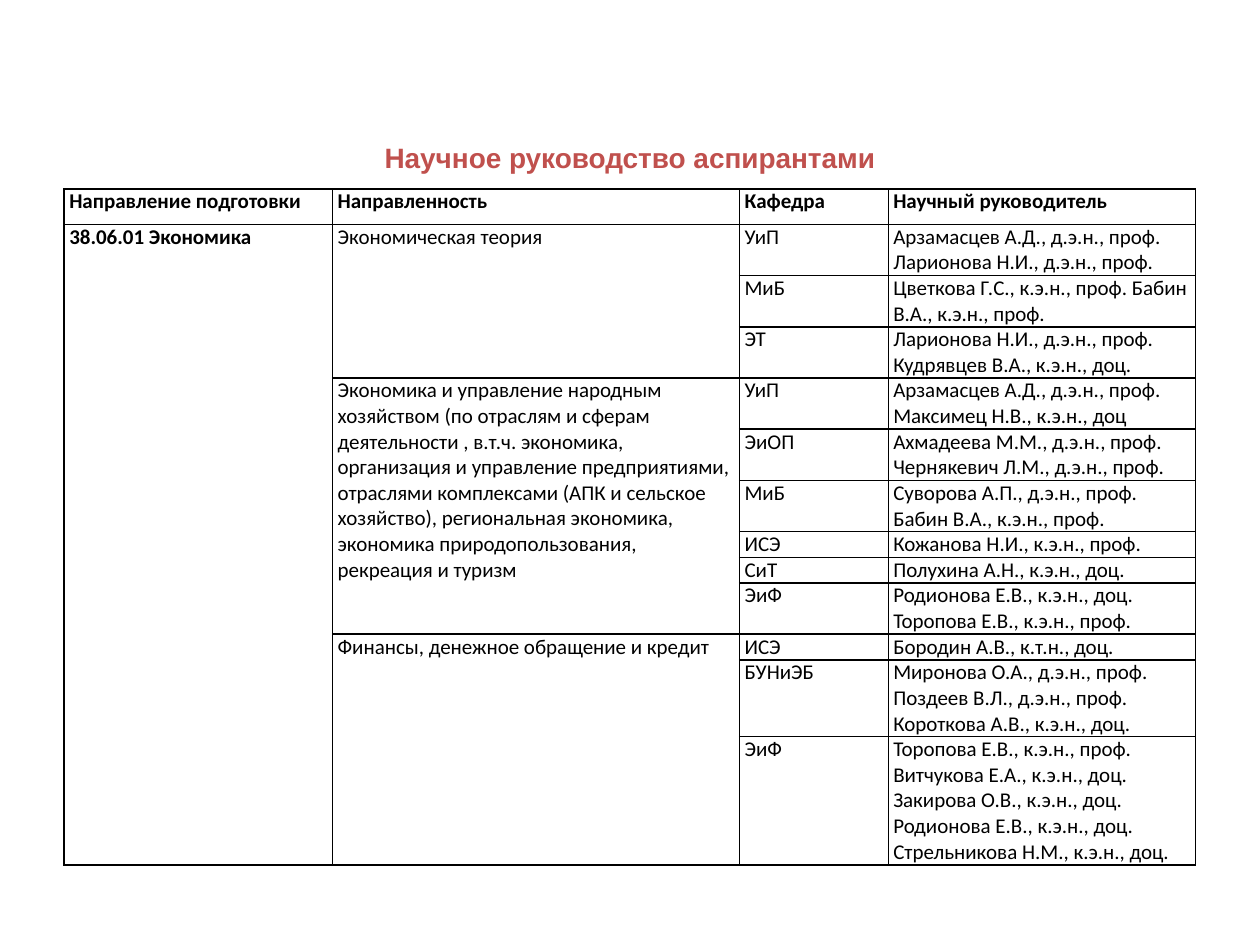
from math import ceil

from lxml.etree import SubElement
from pptx import Presentation
from pptx.dml.color import RGBColor
from pptx.enum.text import MSO_ANCHOR, MSO_AUTO_SIZE, PP_ALIGN
from pptx.oxml.ns import qn
from pptx.util import Inches, Pt

TITLE = "Научное руководство аспирантами"
HEADERS = ["Направление подготовки", "Направленность", "Кафедра", "Научный руководитель"]
PROGRAMME = "38.06.01 Экономика"
# Each specialization lists its departments with their supervisors, one paragraph a line.
SPECIALIZATIONS = [
    ("Экономическая теория", [
        ("УиП", "Арзамасцев А.Д., д.э.н., проф. Ларионова Н.И., д.э.н., проф."),
        ("МиБ", "Цветкова Г.С., к.э.н., проф. Бабин В.А., к.э.н., проф."),
        ("ЭТ", "Ларионова Н.И., д.э.н., проф.\nКудрявцев В.А., к.э.н., доц."),
    ]),
    ("Экономика и управление народным хозяйством (по отраслям и сферам деятельности , "
     "в.т.ч. экономика, организация и управление предприятиями, отраслями комплексами "
     "(АПК и сельское хозяйство), региональная экономика, экономика природопользования, "
     "рекреация и туризм", [
        ("УиП", "Арзамасцев А.Д., д.э.н., проф.\nМаксимец Н.В., к.э.н., доц"),
        ("ЭиОП", "Ахмадеева М.М., д.э.н., проф.\nЧернякевич Л.М., д.э.н., проф."),
        ("МиБ", "Суворова А.П., д.э.н., проф. Бабин В.А., к.э.н., проф."),
        ("ИСЭ", "Кожанова Н.И., к.э.н., проф."),
        ("СиТ", "Полухина А.Н., к.э.н., доц."),
        ("ЭиФ", "Родионова Е.В., к.э.н., доц.\nТоропова Е.В., к.э.н., проф."),
    ]),
    ("Финансы, денежное обращение и кредит", [
        ("ИСЭ", "Бородин А.В., к.т.н., доц."),
        ("БУНиЭБ", "Миронова О.А., д.э.н., проф.\nПоздеев В.Л., д.э.н., проф.\n"
                   "Короткова А.В., к.э.н., доц."),
        ("ЭиФ", "Торопова Е.В., к.э.н., проф.\nВитчукова Е.А., к.э.н., доц.\n"
                "Закирова О.В., к.э.н., доц.\nРодионова Е.В., к.э.н., доц.\n"
                "Стрельникова Н.М., к.э.н., доц."),
    ]),
]
COLUMN_WIDTHS = [2.13, 3.23, 1.18, 2.44]
HEADER_HEIGHT = 0.28
LINE_HEIGHT = 0.2
SUPERVISOR_LINE_LENGTH = 40


def color(value):
    return RGBColor.from_string(value)


def count_lines(text):
    return sum(ceil(len(line) / SUPERVISOR_LINE_LENGTH) for line in text.split("\n"))


class SlideBuilder:
    title_font, table_font = "Arial", "Calibri"
    accent, ink = "C0504D", "000000"
    thin, thick = 1, 1.5

    def __init__(self, presentation):
        self.slide = presentation.slides.add_slide(presentation.slide_layouts[5])

    def style_font(self, font, name, size, value, bold):
        font.name, font.size, font.bold = name, Pt(size), bold
        font.color.rgb = color(value)

    def title(self, text, left, top, width, height):
        shape = self.slide.shapes.title
        shape.left, shape.top = Inches(left), Inches(top)
        shape.width, shape.height = Inches(width), Inches(height)
        frame = shape.text_frame
        frame.text = text
        frame.word_wrap = True
        frame.auto_size = MSO_AUTO_SIZE.NONE
        frame.vertical_anchor = MSO_ANCHOR.MIDDLE
        paragraph = frame.paragraphs[0]
        paragraph.alignment = PP_ALIGN.CENTER
        paragraph.line_spacing = 1.15
        self.style_font(paragraph.runs[0].font, self.title_font, 16, self.accent, True)

    def table(self, left, top, widths, heights):
        frame = self.slide.shapes.add_table(
            len(heights), len(widths), Inches(left), Inches(top),
            Inches(sum(widths)), Inches(sum(heights)))
        table = frame.table
        table.first_row = table.horz_banding = False
        for column, width in zip(table.columns, widths):
            column.width = Inches(width)
        for row, height in zip(table.rows, heights):
            row.height = Inches(height)
        return table

    def cell(self, cell, text, bold=False):
        cell.text_frame.text = text
        for paragraph in cell.text_frame.paragraphs:
            for run in paragraph.runs:
                self.style_font(run.font, self.table_font, 12, self.ink, bold)

    def frame_cell(self, cell, top, bottom):
        """Draw the four borders of a cell and clear its fill."""
        cell.margin_left = cell.margin_right = Inches(0.04)
        cell.margin_top = cell.margin_bottom = 0
        properties = cell._tc.get_or_add_tcPr()
        sides = {"a:lnL": self.thin, "a:lnR": self.thin, "a:lnT": top, "a:lnB": bottom}
        for tag, width in sides.items():
            line = SubElement(properties, qn(tag), w=str(Pt(width)))
            fill = SubElement(line, qn("a:solidFill"))
            SubElement(fill, qn("a:srgbClr"), val=self.ink)
        cell.fill.background()


def main():
    presentation = Presentation()
    presentation.slide_width, presentation.slide_height = Inches(10), Inches(7.5)
    builder = SlideBuilder(presentation)
    builder.title(TITLE, 0, 1.07, 10, 0.31)

    heights = [HEADER_HEIGHT] + [LINE_HEIGHT * count_lines(supervisors)
                                 for _, departments in SPECIALIZATIONS
                                 for _, supervisors in departments]
    table = builder.table(0.51, 1.5, COLUMN_WIDTHS, heights)
    for column, header in enumerate(HEADERS):
        builder.cell(table.cell(0, column), header, bold=True)
    builder.cell(table.cell(1, 0), PROGRAMME, bold=True)

    row = 1
    group_ends = set()
    for specialization, departments in SPECIALIZATIONS:
        first = row
        builder.cell(table.cell(first, 1), specialization)
        for department, supervisors in departments:
            builder.cell(table.cell(row, 2), department)
            builder.cell(table.cell(row, 3), supervisors)
            row += 1
        group_ends.add(row - 1)
        table.cell(first, 1).merge(table.cell(row - 1, 1))
    table.cell(1, 0).merge(table.cell(row - 1, 0))

    for row in range(len(heights)):
        for column in range(len(COLUMN_WIDTHS)):
            top, bottom = (builder.thick if column and edge in group_ends else builder.thin
                           for edge in (row - 1, row))
            if column == 1 and table.cell(row, 1).is_merge_origin:
                bottom = builder.thick
            builder.frame_cell(table.cell(row, column), top, bottom)
    presentation.save("out.pptx")


if __name__ == "__main__":
    main()
